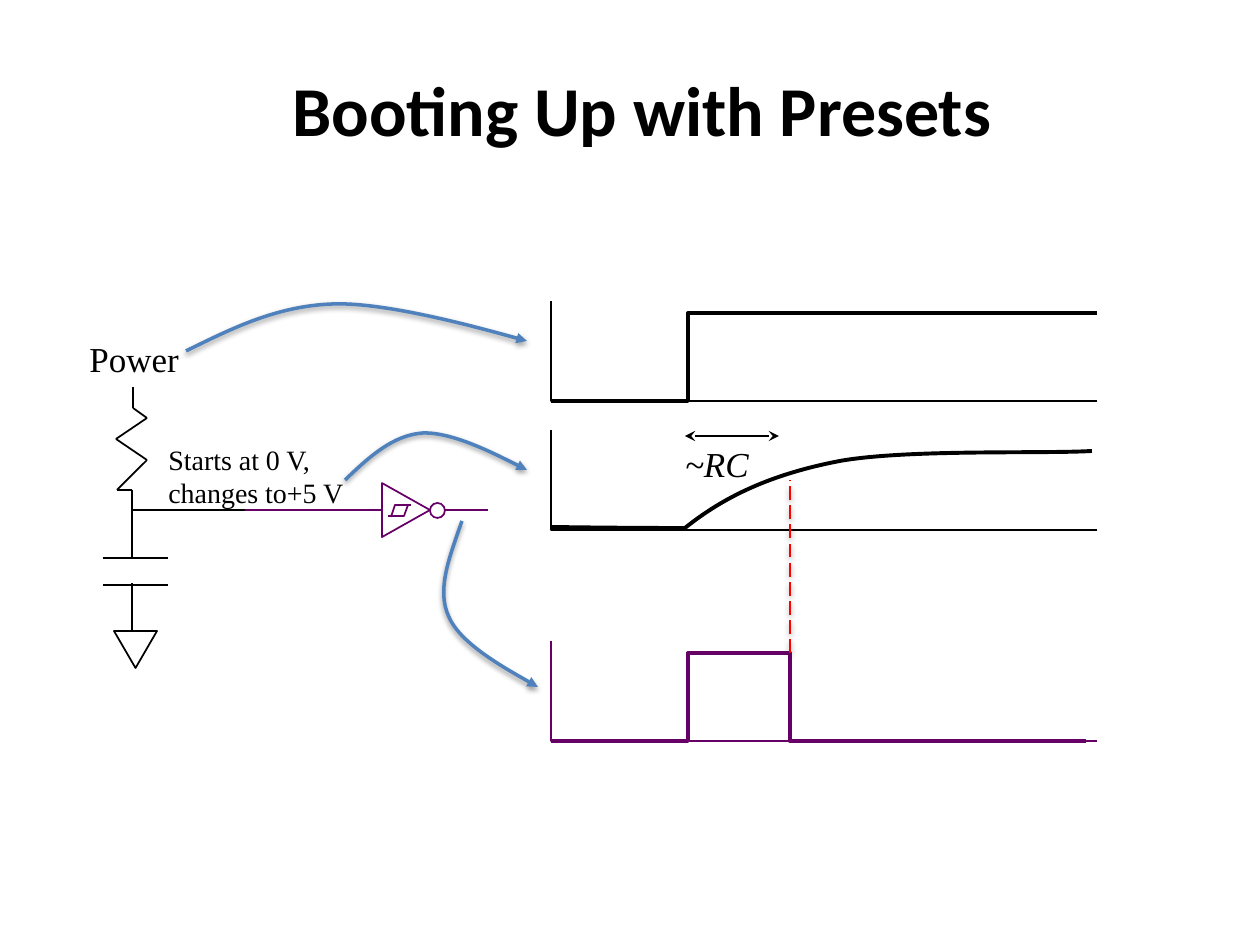
from itertools import pairwise

from lxml import etree
from pptx import Presentation
from pptx.dml.color import RGBColor
from pptx.enum.dml import MSO_LINE
from pptx.enum.shapes import MSO_CONNECTOR, MSO_SHAPE
from pptx.enum.text import MSO_ANCHOR, PP_ALIGN
from pptx.oxml.ns import qn
from pptx.util import Emu, Inches, Pt

BLACK = RGBColor(0, 0, 0)
WHITE = RGBColor(255, 255, 255)
PURPLE = RGBColor(0x66, 0, 0x66)
BLUE = RGBColor(0x4F, 0x81, 0xBD)
RED = RGBColor(255, 0, 0)

STRAIGHT = MSO_CONNECTOR.STRAIGHT
TRIANGLE = MSO_SHAPE.ISOSCELES_TRIANGLE
OVAL = MSO_SHAPE.OVAL
DASH = MSO_LINE.LONG_DASH
CENTER = PP_ALIGN.CENTER
MIDDLE = MSO_ANCHOR.MIDDLE

SCALE = 914400 / 126  # EMU per px


def px(*sizes):
    return [Emu(round(size * SCALE)) for size in sizes]


class Board:
    """Holds the slide and the drawing style."""

    body = "Times New Roman"
    head = "Calibri"
    thin, mid, wide = 0.75, 1, 2.25

    def __init__(self, slide):
        self.slide = slide
        self.shapes = slide.shapes

    def stroke(self, item, color, width):
        item.line.color.rgb = color
        item.line.width = Pt(width)

    def tips(self, item, kind, *ends):
        line = item.element.spPr.find(qn("a:ln"))
        for end in ends:
            etree.SubElement(line, qn(f"a:{end}End"), type=kind)

    def shade(self, item, on):
        """Replace the theme shadow by none or by a soft drop shadow."""
        props = item.element.spPr
        effect = etree.SubElement(props, qn("a:effectLst"))
        if on:
            drop = etree.SubElement(
                effect, qn("a:outerShdw"), blurRad=str(Pt(3.1)),
                dist=str(Pt(1.6)), dir="5400000", rotWithShape="0")
            tone = etree.SubElement(drop, qn("a:srgbClr"), val=str(BLACK))
            etree.SubElement(tone, qn("a:alpha"), val="38000")

    def put(self, frame, text, size, font, bold=False, italic=False):
        frame.word_wrap = True
        run = frame.paragraphs[0].add_run()
        run.text = text
        run.font.name = font
        run.font.size = Pt(size)
        run.font.bold = bold
        run.font.italic = italic
        run.font.color.rgb = BLACK

    def title(self, text, box):
        item = self.shapes.title
        item.left, item.top, item.width, item.height = px(*box)
        frame = item.text_frame
        frame.vertical_anchor = MIDDLE
        frame.paragraphs[0].alignment = CENTER
        self.put(frame, text, 40, self.head, bold=True)

    def label(self, text, box, size, italic=False, inset=0.1):
        frame = self.shapes.add_textbox(*px(*box)).text_frame
        frame.margin_left = frame.margin_right = Inches(inset)
        self.put(frame, text, size, self.body, italic=italic)

    def line(self, start, end, color=BLACK, shadow=False):
        item = self.shapes.add_connector(STRAIGHT, *px(*start, *end))
        self.stroke(item, color, self.mid)
        self.shade(item, shadow)
        return item

    def chain(self, *points):
        for start, end in pairwise(points):
            self.line(start, end)

    def shape(self, kind, box, color, turn=0):
        item = self.shapes.add_shape(kind, *px(*box))
        item.shadow.inherit = False
        item.fill.solid()
        item.fill.fore_color.rgb = WHITE
        self.stroke(item, color, self.mid)
        item.rotation = turn

    def trace(self, points, color, width, curved=False, shadow=False):
        """Open outline; when curved, each three points are one cubic."""
        pen = self.shapes.build_freeform(*points[0], scale=SCALE)
        pen.add_line_segments(points[1:], close=False)
        item = pen.convert_to_shape()
        item.fill.background()
        self.stroke(item, color, width)
        self.shade(item, shadow)
        if curved:
            steps = list(item.element.iter(qn("a:lnTo")))
            track = steps[0].getparent()
            for i in range(0, len(steps), 3):
                cubic = etree.SubElement(track, qn("a:cubicBezTo"))
                for step in steps[i:i + 3]:
                    cubic.append(step[0])
                    track.remove(step)
        return item

    def axes(self, top, color):
        left, right, base = 551, 1097, top + 100
        self.trace([(left, top), (left, base), (right, base)],
                   color, self.thin)

    def arrow(self, *points):
        item = self.trace(points, BLUE, 2, curved=True, shadow=True)
        self.tips(item, "triangle", "tail")


def circuit(board):
    node = 510
    board.line((246, node), (132, node))
    board.chain((133, 387), (133, 408), (147, 418), (116, 439), (147, 460),
                (117, 490), (132, 490), (132, node))
    for plate in (558, 585):
        board.line((103, plate), (168, plate))
    board.line((132, 558), (132, node))
    board.line((132, 631), (132, 583))
    board.shape(TRIANGLE, (114, 631, 43, 37), BLACK, turn=180)
    board.label("Starts at 0 V, changes to+5 V", (156, 436, 202, 86), 16)
    board.label("Power", (77, 331, 123, 50), 20)


def gate(board):
    board.line((488, 510), (245, 510), PURPLE)
    board.shape(TRIANGLE, (379, 486, 54, 48), PURPLE, turn=90)
    board.shape(OVAL, (430, 503, 15, 15), PURPLE)
    for bend in ([(411, 505), (395, 505), (391, 517)],
                 [(388, 516), (404, 516), (408, 505)]):
        board.trace(bend, PURPLE, board.mid)


def plots(board):
    for top, color in ((301, BLACK), (430, BLACK), (641, PURPLE)):
        board.axes(top, color)
    board.trace([(551, 401), (688, 401), (688, 313), (1097, 313)],
                BLACK, board.wide)
    board.trace([(551, 527), (551, 527), (619, 528), (685, 528),
                 (725, 496), (772, 474), (840, 461),
                 (908, 449), (1041, 454), (1092, 451)],
                BLACK, board.wide, curved=True)
    board.trace([(551, 741), (688, 741), (688, 653), (790, 653),
                 (790, 741), (1086, 741)], PURPLE, board.wide)
    span = board.line((685, 436), (779, 436))
    board.tips(span, "stealth", "head", "tail")
    board.label("~RC", (685, 436, 81, 67), 20, italic=True, inset=0)


def links(board):
    board.arrow((186, 351), (231, 329), (276, 306), (333, 304),
                (389, 302), (527, 341), (527, 341))
    board.arrow((345, 480), (369, 457), (393, 435), (423, 433),
                (454, 432), (527, 470), (527, 470))
    board.arrow((462, 521), (450, 556), (436, 590), (449, 617),
                (461, 645), (538, 687), (538, 687))
    mark = board.line((790, 653), (790, 480), RED, shadow=True)
    mark.line.dash_style = DASH


def main():
    deck = Presentation()
    deck.slide_width, deck.slide_height = px(1260, 945)
    board = Board(deck.slides.add_slide(deck.slide_layouts[5]))
    board.title("Booting Up with Presets", (175, 60, 934, 97))
    circuit(board)
    plots(board)
    gate(board)
    links(board)
    deck.save("out.pptx")


if __name__ == "__main__":
    main()
